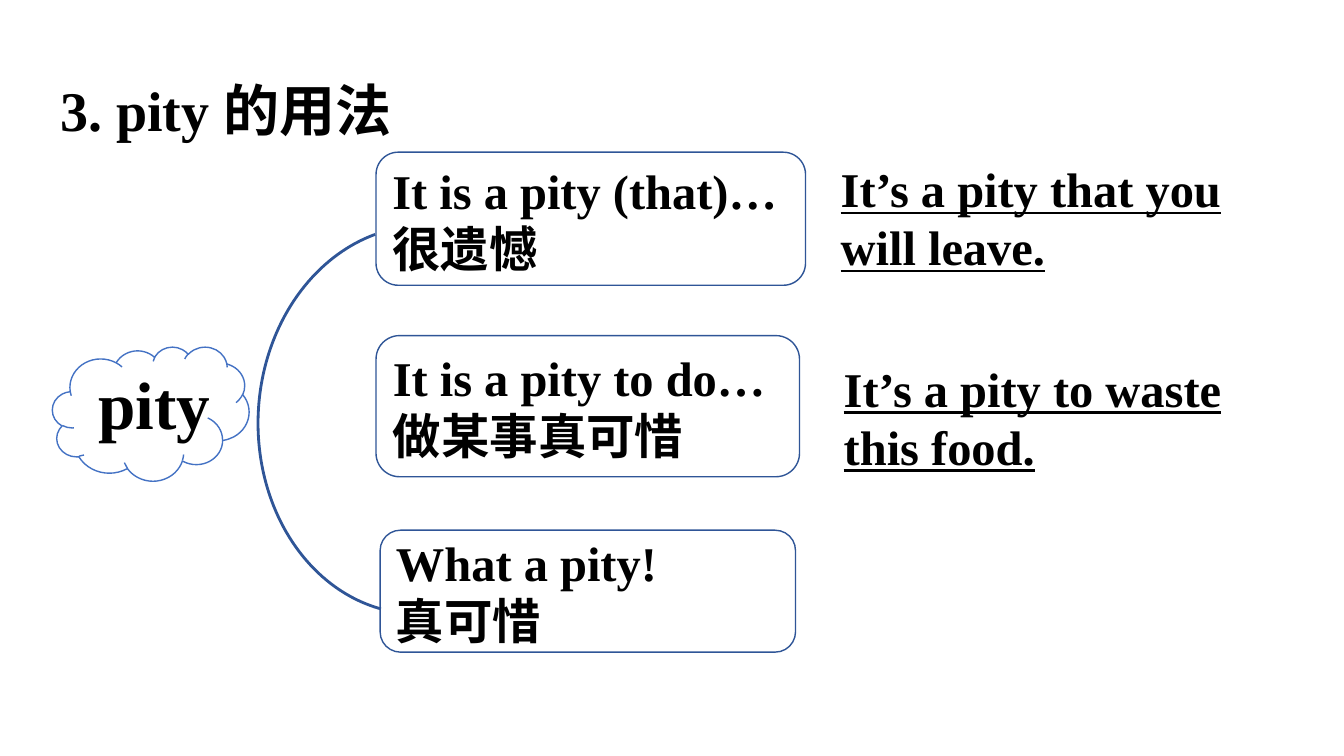
from lxml.etree import SubElement
from pptx import Presentation
from pptx.dml.color import RGBColor
from pptx.enum.shapes import MSO_SHAPE
from pptx.enum.text import MSO_ANCHOR, PP_ALIGN
from pptx.oxml.ns import qn
from pptx.util import Pt

PX = 9144
BLACK = RGBColor(0x00, 0x00, 0x00)
NAVY = RGBColor(0x2F, 0x55, 0x97)
BLUE = RGBColor(0x44, 0x72, 0xC4)
LATIN = "Times New Roman"
CHINESE = "Noto Sans CJK SC"
BODY_SIZE = 34.6

USAGES = [
    ((373, 151, 426, 132), ["It is a pity (that)…", "很遗憾"]),
    ((373, 333, 420, 140), ["It is a pity to do…", "做某事真可惜"]),
    ((377, 526, 412, 121), ["What a pity!", "真可惜"]),
]
EXAMPLES = [
    ((824, 153, 455, 127), "It’s a pity that you will leave."),
    ((827, 351, 410, 185), "It’s a pity to waste this food."),
]


def emu(box):
    return [length * PX for length in box]


def write(frame, lines, size, underline=None):
    frame.word_wrap = True
    for index, line in enumerate(lines):
        paragraph = frame.add_paragraph() if index else frame.paragraphs[0]
        paragraph.text = line
        paragraph.alignment = PP_ALIGN.LEFT
        font = paragraph.font
        font.size = Pt(size)
        font.bold = True
        font.underline = underline
        font.color.rgb = BLACK
        font.name = LATIN
        defaults = paragraph._p.pPr.find(qn("a:defRPr"))
        SubElement(defaults, qn("a:ea")).set("typeface", CHINESE)


def add_text(shapes, box, line, size, underline=None):
    write(shapes.add_textbox(*emu(box)).text_frame, [line], size, underline)


def add_outline(shapes, preset, box, color, width):
    outline = shapes.add_shape(preset, *emu(box))
    outline.shadow.inherit = False
    outline.fill.background()
    outline.line.color.rgb = color
    outline.line.width = Pt(width)
    return outline


def add_bracket(shapes, box):
    bracket = add_outline(shapes, MSO_SHAPE.ARC, box, NAVY, 2)
    bracket.rotation = 272.7
    bracket.adjustments[0] = 113.37
    bracket.adjustments[1] = 206.24


def add_usage(shapes, box, lines):
    usage = add_outline(shapes, MSO_SHAPE.ROUNDED_RECTANGLE, box, NAVY, 1)
    usage.text_frame.vertical_anchor = MSO_ANCHOR.MIDDLE
    write(usage.text_frame, lines, BODY_SIZE)


def add_keyword(shapes, box, word):
    left, top, width, height = box
    keyword = shapes.add_group_shape().shapes
    add_outline(keyword, MSO_SHAPE.CLOUD, box, BLUE, 1)
    add_text(keyword, (left + 36, top + 11, width - 38, height - 42), word, 48)


def main():
    deck = Presentation()
    deck.slide_width = 1333 * PX
    deck.slide_height = 750 * PX
    shapes = deck.slides.add_slide(deck.slide_layouts[6]).shapes
    add_text(shapes, (50, 70, 350, 77), "3. pity 的用法", 40)
    add_bracket(shapes, (224, 256, 385, 321))
    for box, lines in USAGES:
        add_usage(shapes, box, lines)
    for box, sentence in EXAMPLES:
        add_text(shapes, box, sentence, BODY_SIZE, True)
    add_keyword(shapes, (52, 344, 195, 133), "pity")
    deck.save("out.pptx")


if __name__ == "__main__":
    main()
